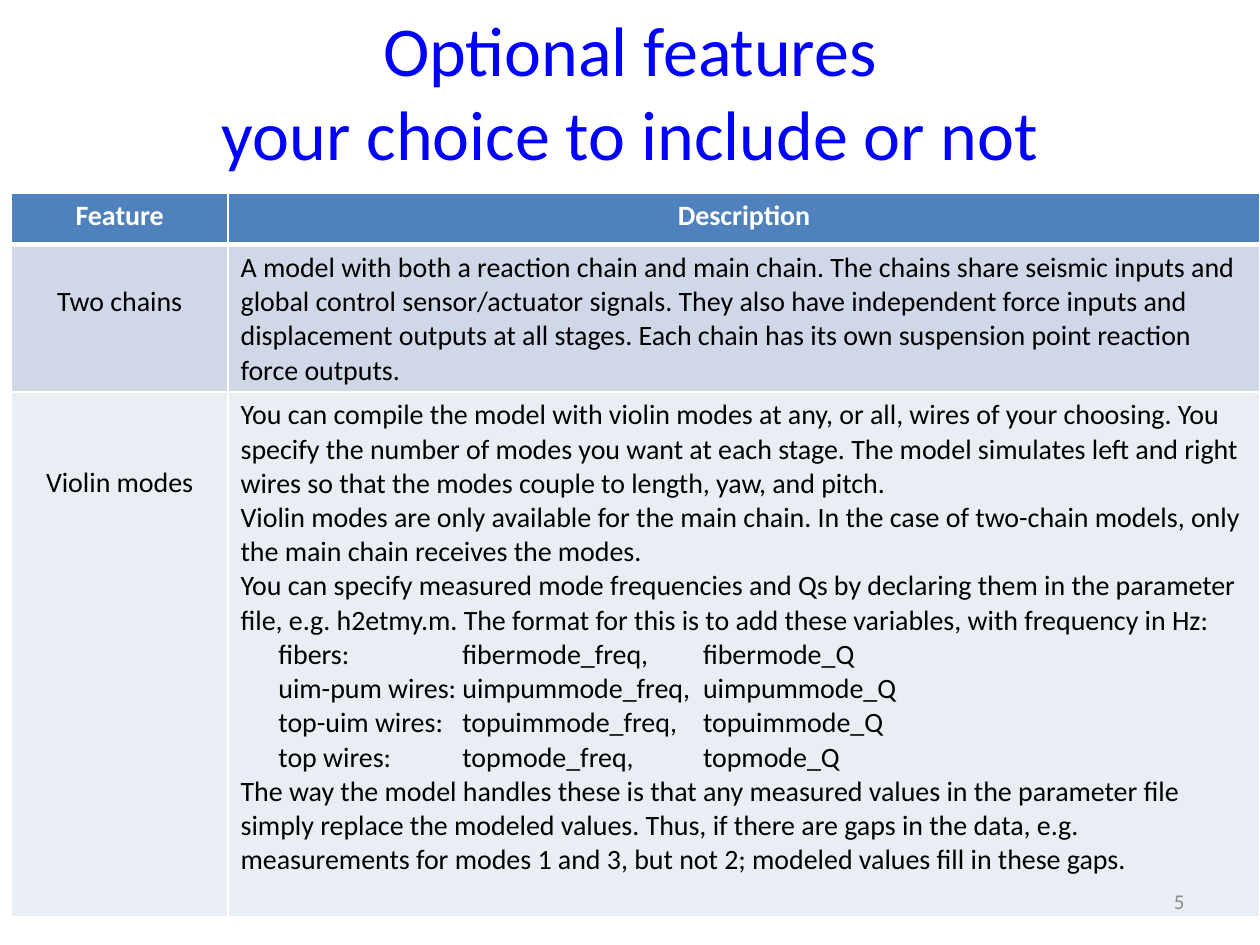
import pptx
import pptx.dml.color
import pptx.enum.text
import pptx.oxml
import pptx.oxml.ns
import pptx.util
from lxml import etree

Inches, Pt = pptx.util.Inches, pptx.util.Pt
RGBColor = pptx.dml.color.RGBColor
ALIGN = pptx.enum.text.PP_ALIGN
MIDDLE = pptx.enum.text.MSO_ANCHOR.MIDDLE
qn = pptx.oxml.ns.qn

WHITE = RGBColor(0xFF, 0xFF, 0xFF)
BLACK = RGBColor(0, 0, 0)
TITLE_BLUE = RGBColor(0, 0, 0xFF)
HEADER_BLUE = RGBColor(0x4F, 0x81, 0xBD)
BAND_DARK = RGBColor(0xD0, 0xD8, 0xE8)
BAND_LIGHT = RGBColor(0xE9, 0xED, 0xF4)
GREY = RGBColor(0x8C, 0x8C, 0x8C)

LINE_HEIGHT = 0.27
CELL_MARGIN = 0.05
VARIABLE_TABS = (0.3, 1.76, 3.67)

TWO_CHAINS = [
    "A model with both a reaction chain and main chain. The chains share seismic inputs and "
    "global control sensor/actuator signals. They also have independent force inputs and "
    "displacement outputs at all stages. Each chain has its own suspension point reaction "
    "force outputs.",
]
VIOLIN_MODES = [
    "You can compile the model with violin modes at any, or all, wires of your choosing. You "
    "specify the number of modes you want at each stage. The model simulates left and right "
    "wires so that the modes couple to length, yaw, and pitch.",
    "Violin modes are only available for the main chain. In the case of two-chain models, only "
    "the main chain receives the modes.",
    "You can specify measured mode frequencies and Qs by declaring them in the parameter "
    "file, e.g. h2etmy.m. The format for this is to add these variables, with frequency in Hz:",
    "\tfibers:\tfibermode_freq,\tfibermode_Q",
    "\tuim-pum wires:\tuimpummode_freq,\tuimpummode_Q",
    "\ttop-uim wires:\ttopuimmode_freq,\ttopuimmode_Q",
    "\ttop wires:\ttopmode_freq,\ttopmode_Q",
    "The way the model handles these is that any measured values in the parameter file "
    "simply replace the modeled values. Thus, if there are gaps in the data, e.g. "
    "measurements for modes 1 and 3, but not 2; modeled values fill in these gaps.",
]

# height, fill, text colour, lines above the label, label, description
FEATURES = [
    (0.41, HEADER_BLUE, WHITE, 0, "Feature", ["Description"]),
    (1.17, BAND_DARK, BLACK, 1, "Two chains", TWO_CHAINS),
    (4.17, BAND_LIGHT, BLACK, 2, "Violin modes", VIOLIN_MODES),
]


class SlideBuilder:
    def __init__(self, slide, font="Calibri"):
        self.slide = slide
        self.font = font

    def fill_text(self, frame, paragraphs, color, align, **font_format):
        frame.word_wrap = True
        frame.text = "\n".join(paragraphs)
        for paragraph in frame.paragraphs:
            paragraph.alignment = align
            for run in paragraph.runs:
                run.font.color.rgb = color
                for name, value in {"name": self.font, **font_format}.items():
                    setattr(run.font, name, value)
            if paragraph.text.startswith("\t"):
                self.set_tabs(paragraph)

    def set_tabs(self, paragraph):
        stops = etree.SubElement(paragraph._p.get_or_add_pPr(), qn("a:tabLst"))
        for position in VARIABLE_TABS:
            etree.SubElement(stops, qn("a:tab"), pos=str(Inches(position)), algn="l")

    def text(self, box, content, color, align, size):
        frame = self.slide.shapes.add_textbox(*map(Inches, box)).text_frame
        frame.vertical_anchor = MIDDLE
        self.fill_text(frame, [content], color, align, size=Pt(size))

    def borders(self, cell, top, bottom):
        properties = cell._tc.get_or_add_tcPr()
        for side, width in (("L", 1), ("R", 1), ("T", top), ("B", bottom)):
            line = etree.SubElement(properties, qn(f"a:ln{side}"), w=str(Pt(width)))
            fill = etree.SubElement(line, qn("a:solidFill"))
            etree.SubElement(fill, qn("a:srgbClr"), val=str(WHITE))

    def feature_table(self, left, top, widths, features):
        total_height = sum(feature[0] for feature in features)
        table = self.slide.shapes.add_table(
            len(features), len(widths), Inches(left), Inches(top),
            Inches(sum(widths)), Inches(total_height)).table
        for column, width in zip(table.columns, widths):
            column.width = Inches(width)
        for index, (height, fill, color, skip, label, description) in enumerate(features):
            table.rows[index].height = Inches(height)
            is_header = index == 0
            for column, content in enumerate(([label], description)):
                cell = table.cell(index, column)
                self.borders(cell, 3 if index == 1 else 1, 3 if is_header else 1)
                cell.fill.solid()
                cell.fill.fore_color.rgb = fill
                centred = is_header or column == 0
                self.fill_text(cell.text_frame, content, color,
                               ALIGN.CENTER if centred else ALIGN.LEFT,
                               size=Pt(16), bold=is_header)
            table.cell(index, 0).margin_top = Inches(CELL_MARGIN + skip * LINE_HEIGHT)


def main():
    deck = pptx.Presentation()
    deck.slide_width, deck.slide_height = Inches(10), Inches(7.5)
    builder = SlideBuilder(deck.slides.add_slide(deck.slide_layouts[6]))
    builder.text((0.5, 0.09, 9, 1.25), "Optional features\vyour choice to include or not",
                 TITLE_BLUE, ALIGN.CENTER, 40)
    builder.feature_table(0.09, 1.53, (1.72, 8.19), FEATURES)
    builder.text((7.17, 6.95, 2.33, 0.4), "5", GREY, ALIGN.RIGHT, 12)
    deck.save("out.pptx")


if __name__ == "__main__":
    main()
